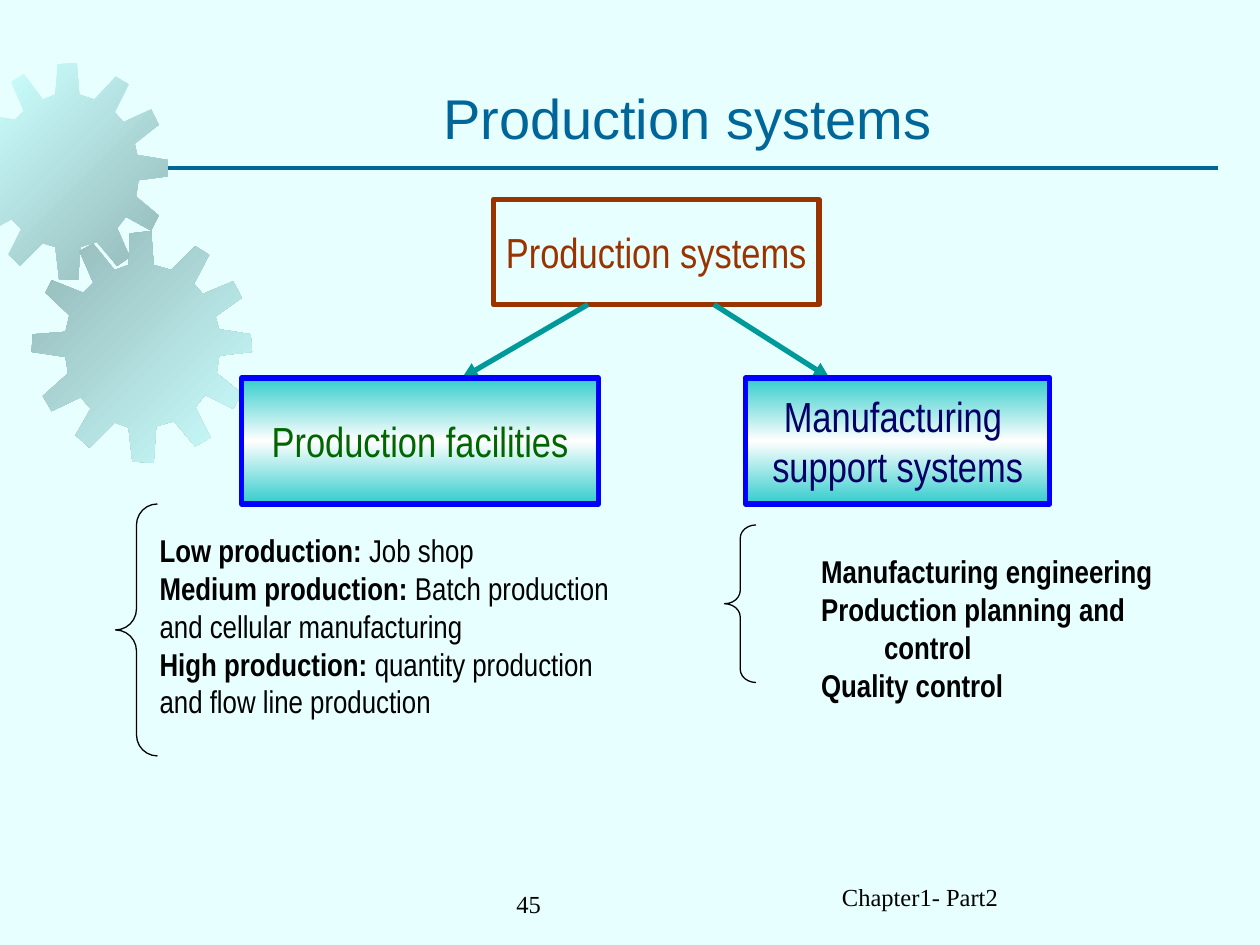
import pptx
import pptx.dml.color
import pptx.enum.shapes
import pptx.enum.text
import pptx.oxml
import pptx.oxml.ns
import pptx.util

ANCHOR = pptx.enum.text.MSO_ANCHOR
ALIGN = pptx.enum.text.PP_ALIGN
SHAPE = pptx.enum.shapes.MSO_SHAPE
UNIT = pptx.util.Inches(10) / 120  # the slide is 120 columns by 90 rows
NARROW, SERIF = "Arial Narrow", "Times New Roman"
LIGHT, DARK = "CCFFFF", "92B6B6"

# Outlines in hundredths of an inch from the corner of each gear's box
UPPER_GEAR = [
    (75, 29), (63, 25), (61, 0), (46, 1), (44, 25), (34, 29), (19, 9), (9, 15),
    (19, 38), (12, 45), (0, 43), (0, 129), (9, 124), (17, 132), (7, 152), (16, 161),
    (34, 143), (44, 146), (47, 172), (62, 172), (64, 146), (77, 142), (93, 161),
    (103, 154), (93, 131), (100, 122), (120, 133), (126, 121), (108, 106), (110, 93),
    (133, 90), (133, 77), (109, 73), (107, 64), (126, 49), (120, 37), (98, 47),
    (91, 39), (102, 17), (92, 11)]
LOWER_GEAR = [
    (111, 31), (97, 27), (95, 0), (78, 2), (77, 27), (66, 31), (49, 10), (38, 16),
    (49, 41), (41, 49), (16, 39), (11, 49), (30, 67), (27, 80), (1, 82), (0, 96),
    (27, 100), (29, 113), (9, 131), (16, 143), (39, 132), (47, 141), (35, 162),
    (46, 172), (66, 152), (77, 156), (80, 183), (97, 184), (99, 155), (113, 151),
    (130, 171), (142, 164), (130, 140), (138, 130), (160, 141), (167, 129), (147, 113),
    (149, 99), (175, 96), (174, 82), (149, 78), (146, 68), (167, 53), (160, 40),
    (136, 50), (129, 42), (141, 19), (130, 12)]


def color(value):
    return pptx.dml.color.RGBColor.from_string(value)


def grid(*cells):
    return [round(cell * UNIT) for cell in cells]


def place(shape, box):
    shape.left, shape.top, shape.width, shape.height = grid(*box)


def add_xml(parent, tag, content="", attributes=""):
    namespace = pptx.oxml.ns.nsdecls("a")
    element = pptx.oxml.parse_xml(f"<a:{tag} {namespace} {attributes}>{content}</a:{tag}>")
    parent.append(element)


def fill_gradient(shape, stops, angle):
    """Fill with evenly spaced colours; the angle runs clockwise."""
    shape.fill.gradient()
    gradient = shape.fill._fill._gradFill
    for child in list(gradient):
        gradient.remove(child)
    content = "".join(
        f'<a:gs pos="{100000 * index // (len(stops) - 1)}"><a:srgbClr val="{stop}"/></a:gs>'
        for index, stop in enumerate(stops))
    add_xml(gradient, "gsLst", content)
    add_xml(gradient, "lin", attributes=f'ang="{angle * 60000}" scaled="0"')


def write(paragraph, runs, font, size, hex_color):
    """Add (text, bold) runs to a paragraph."""
    for text, bold in runs:
        run = paragraph.add_run()
        run.text = text
        run.font.name, run.font.size, run.font.bold = font, pptx.util.Pt(size), bold
        run.font.color.rgb = color(hex_color)


def paragraphs(frame, count):
    return [frame.paragraphs[0]] + [frame.add_paragraph() for _ in range(count - 1)]


def add_gear(slide, corner, points, stops):
    builder = slide.shapes.build_freeform(*points[0], scale=pptx.util.Inches(0.01))
    builder.add_line_segments(points[1:], close=True)
    gear = builder.convert_to_shape(*grid(*corner))
    gear.shadow.inherit = False
    fill_gradient(gear, stops, 45)
    gear.line.fill.background()


def add_line(slide, start, end, hex_color, width, arrow=False):
    line = slide.shapes.add_connector(
        pptx.enum.shapes.MSO_CONNECTOR.STRAIGHT, *grid(*start, *end))
    line.line.color.rgb = color(hex_color)
    line.line.width = pptx.util.Pt(width)
    if arrow:
        add_xml(line.line._get_or_add_ln(), "tailEnd", attributes='type="triangle"')
    add_xml(line._element.spPr, "effectLst")


def add_shape(slide, kind, box, line_color, line_width):
    shape = slide.shapes.add_shape(kind, *grid(*box))
    shape.shadow.inherit = False
    shape.fill.background()
    shape.line.color.rgb = color(line_color)
    shape.line.width = pptx.util.Pt(line_width)
    return shape


def add_node(slide, box, lines, text_color, line_color, stops=None):
    node = add_shape(slide, SHAPE.RECTANGLE, box, line_color, 3)
    if stops:
        fill_gradient(node, stops, 90)
    frame = node.text_frame
    frame.word_wrap = False
    frame.vertical_anchor = ANCHOR.MIDDLE
    for paragraph, text in zip(paragraphs(frame, len(lines)), lines):
        paragraph.alignment = ALIGN.CENTER
        write(paragraph, [(text, False)], NARROW, 24, text_color)


def add_brace(slide, box, curve):
    brace = add_shape(slide, SHAPE.LEFT_BRACE, box, "000000", 0.75)
    brace.adjustments[0], brace.adjustments[1] = curve, 0.5


def fill_title(title, box, text):
    place(title, box)
    title.text_frame.vertical_anchor = ANCHOR.BOTTOM
    paragraph = title.text_frame.paragraphs[0]
    paragraph.alignment = ALIGN.CENTER
    write(paragraph, [(text, False)], "Arial", 32, "006699")


def fill_list(body, box, items, margin=0, indent=0):
    """Fill a body placeholder with unbulleted items; margins are in columns."""
    place(body, box)
    frame = body.text_frame
    frame.word_wrap = True
    frame.auto_size = pptx.enum.text.MSO_AUTO_SIZE.SHAPE_TO_FIT_TEXT
    for paragraph, runs in zip(paragraphs(frame, len(items)), items):
        paragraph.space_before = pptx.util.Pt(0)
        properties = paragraph._p.get_or_add_pPr()
        properties.set("marL", str(grid(margin)[0]))
        properties.set("indent", str(grid(indent)[0]))
        add_xml(properties, "buNone")
        write(paragraph, runs, NARROW, 18, "000000")


def add_footer(slide, box, text):
    frame = slide.shapes.add_textbox(*grid(*box)).text_frame
    frame.word_wrap = True
    write(frame.paragraphs[0], [(text, False)], SERIF, 14, "000000")


def add_decoration(slide):
    add_gear(slide, (0, 6), UPPER_GEAR, [LIGHT, DARK])
    add_gear(slide, (3, 22), LOWER_GEAR, [DARK, LIGHT])
    add_line(slide, (16, 16), (116, 16), "006699", 2)


def add_tree(slide):
    band = ["33CCCC", "FFFFFF", "33CCCC"]
    add_node(slide, (47, 19, 31, 10), ["Production systems"], "993300", "993300")
    for start, end in [((56, 29), (44, 36)), ((68, 29), (79, 36))]:
        add_line(slide, start, end, "009999", 3, arrow=True)
    add_node(slide, (23, 36, 34, 12), ["Production facilities"], "006600", "0000FF", band)
    add_node(slide, (71, 36, 29, 12), ["Manufacturing ", "support systems"],
             "000066", "0000FF", band)


def main():
    presentation = pptx.Presentation()
    presentation.slide_width, presentation.slide_height = grid(120, 90)
    slide = presentation.slides.add_slide(
        presentation.slide_layouts.get_by_name("Two Content"))
    slide.background.fill.solid()
    slide.background.fill.fore_color.rgb = color("E7FFFF")
    title, facilities, support = list(slide.placeholders)[:3]

    add_decoration(slide)
    fill_title(title, (15, 3, 101, 12), "Production systems")
    add_tree(slide)
    fill_list(facilities, (14, 50, 47, 22.8), [
        [("Low production:", True), (" Job shop", False)],
        [("Medium production:", True),
         (" Batch production and cellular manufacturing", False)],
        [("High production:", True),
         (" quantity production and flow line production", False)]])
    add_brace(slide, (11, 48, 4, 24), 0.5)
    fill_list(support, (71, 52, 41, 12), [
        [(text, True)] for text in (
            "Manufacturing engineering", "Production planning and control",
            "Quality control")], margin=12, indent=-6)
    add_brace(slide, (69, 50, 3, 15), 0.42)
    add_footer(slide, (48, 84.1, 28, 6.2), "45")
    add_footer(slide, (79, 83.4, 38, 6.2), "Chapter1- Part2")
    presentation.save("out.pptx")


if __name__ == "__main__":
    main()
